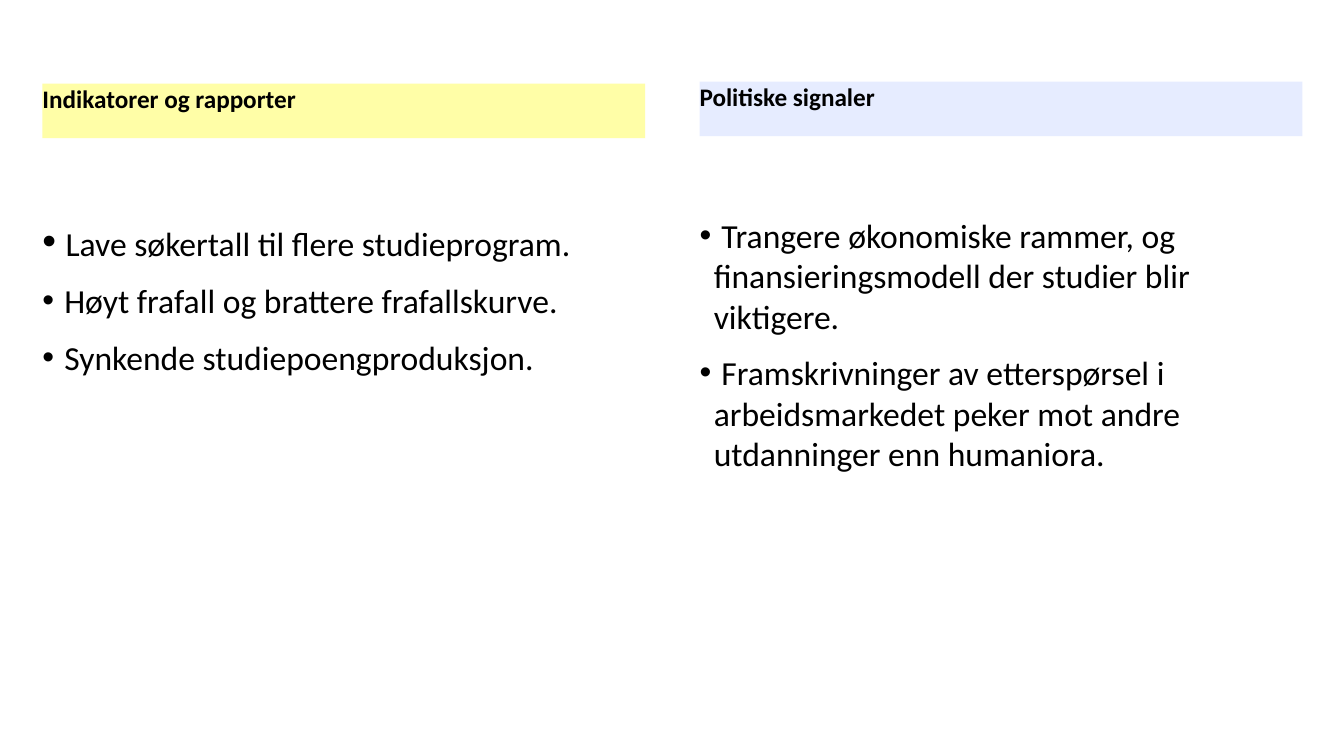
"""Build a slide comparing indicators and reports with political signals."""
from dataclasses import dataclass

from lxml import etree
from pptx import Presentation
from pptx.dml.color import RGBColor
from pptx.enum import shapes, text
from pptx.oxml import ns
from pptx.util import Cm, Length, Pt


@dataclass(frozen=True)
class Theme:
    """Colours, fonts and type sizes of the slide."""
    font: str = "Calibri"
    bullet_font: str = "Arial"
    ink: RGBColor = RGBColor(0x00, 0x00, 0x00)
    yellow: RGBColor = RGBColor(0xFF, 0xFE, 0xA7)
    blue: RGBColor = RGBColor(0xE6, 0xEC, 0xFF)
    heading_size: Length = Pt(18)
    body_size: Length = Pt(24)
    lead_size: Length = Pt(28)
    paragraph_gap: Length = Pt(11.5)


@dataclass(frozen=True)
class Column:
    """A heading band with bullet points below it."""
    left: Length
    top: Length
    fill: RGBColor
    heading: str
    points: tuple[str, ...]
    lead_size: Length


THEME = Theme()
COLUMN_WIDTH = Cm(15.19)
HEADING_HEIGHT = Cm(1.37)
BODY_OFFSET = Cm(3.36)
BODY_HEIGHT = Cm(12.09)
BULLET_INDENT = Cm(0.36)

COLUMNS = (
    Column(Cm(1.07), Cm(2.11), THEME.yellow, "Indikatorer og rapporter", (
        "Lave søkertall til flere studieprogram.",
        "Høyt frafall og brattere frafallskurve.",
        "Synkende studiepoengproduksjon.",
    ), THEME.lead_size),
    Column(Cm(17.63), Cm(2.06), THEME.blue, "Politiske signaler", (
        "Trangere økonomiske rammer, og finansieringsmodell der studier blir viktigere.",
        "Framskrivninger av etterspørsel i arbeidsmarkedet peker mot andre utdanninger enn humaniora.",
    ), THEME.body_size),
)


def format_frame(frame) -> None:
    """Make a text frame wrap from its top left corner without margins."""
    settings = {
        "word_wrap": True, "vertical_anchor": text.MSO_ANCHOR.TOP,
        "margin_left": 0, "margin_top": 0, "margin_right": 0, "margin_bottom": 0,
    }
    for name, value in settings.items():
        setattr(frame, name, value)


def add_run(paragraph, wording: str, size: Length, bold: bool = False) -> None:
    """Add a run in the theme font and ink."""
    run = paragraph.add_run()
    run.text = wording
    for name, value in {"name": THEME.font, "size": size, "bold": bold}.items():
        setattr(run.font, name, value)
    run.font.color.rgb = THEME.ink


def add_bullet(paragraph) -> None:
    """Give a paragraph a hanging bullet."""
    properties = paragraph._p.get_or_add_pPr()
    properties.set("marL", str(BULLET_INDENT))
    properties.set("indent", str(-BULLET_INDENT))
    etree.SubElement(properties, ns.qn("a:buFont"), typeface=THEME.bullet_font)
    etree.SubElement(properties, ns.qn("a:buChar"), char="•")


def add_heading(slide, column: Column) -> None:
    """Draw the filled heading band of a column."""
    band = slide.shapes.add_shape(
        shapes.MSO_SHAPE.RECTANGLE, column.left, column.top, COLUMN_WIDTH, HEADING_HEIGHT)
    band.shadow.inherit = False
    band.fill.solid()
    band.fill.fore_color.rgb = column.fill
    band.line.fill.background()
    format_frame(band.text_frame)
    paragraph = band.text_frame.paragraphs[0]
    paragraph.alignment = text.PP_ALIGN.LEFT
    add_run(paragraph, column.heading, THEME.heading_size, bold=True)


def add_points(slide, column: Column) -> None:
    """Write the bullet points of a column."""
    box = slide.shapes.add_textbox(
        column.left, column.top + BODY_OFFSET, COLUMN_WIDTH, BODY_HEIGHT)
    frame = box.text_frame
    format_frame(frame)
    for index, point in enumerate(column.points):
        paragraph = frame.add_paragraph() if index else frame.paragraphs[0]
        add_bullet(paragraph)
        if index:
            paragraph.space_before = THEME.paragraph_gap
        add_run(paragraph, " ", THEME.body_size if index else column.lead_size)
        add_run(paragraph, point, THEME.body_size)


def main() -> None:
    """Create the presentation and save it."""
    presentation = Presentation()
    presentation.slide_width = Cm(33.87)
    presentation.slide_height = Cm(19.05)
    slide = presentation.slides.add_slide(presentation.slide_layouts[6])
    for column in COLUMNS:
        add_heading(slide, column)
        add_points(slide, column)
    presentation.save("out.pptx")


if __name__ == "__main__":
    main()
